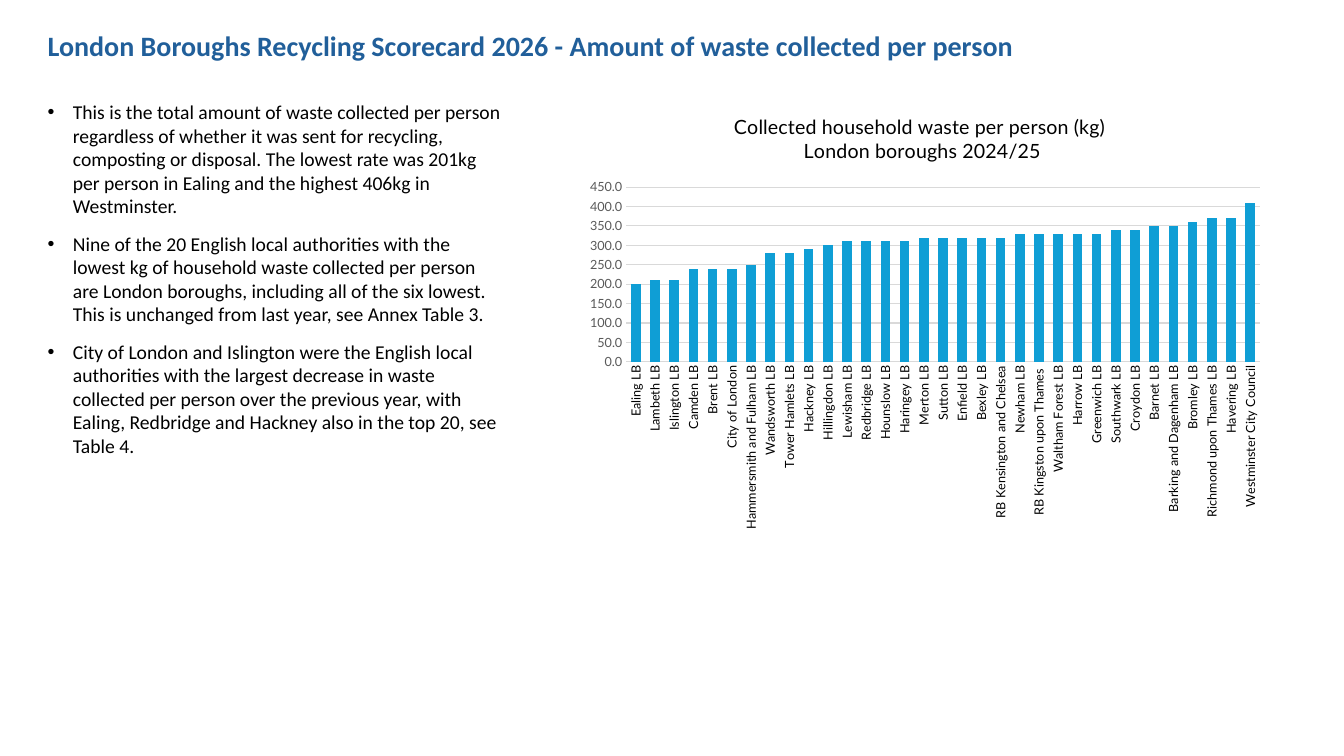
from dataclasses import dataclass
from typing import Any

from lxml import etree
from pptx import Presentation
from pptx.chart.data import CategoryChartData
from pptx.dml.color import RGBColor
from pptx.enum.chart import XL_CHART_TYPE, XL_TICK_MARK
from pptx.enum.text import MSO_ANCHOR
from pptx.oxml import parse_xml
from pptx.oxml.ns import nsdecls, qn
from pptx.util import Inches, Pt

COLUMN = XL_CHART_TYPE.COLUMN_CLUSTERED
NO_TICK = XL_TICK_MARK.NONE
TOP, MIDDLE = MSO_ANCHOR.TOP, MSO_ANCHOR.MIDDLE

NAVY = RGBColor(0x21, 0x5F, 0x9A)
BLUE = RGBColor(0x0F, 0x9E, 0xD5)
BLACK = RGBColor(0, 0, 0)
GREY = RGBColor(0x59, 0x59, 0x59)
PALE = RGBColor(0xD9, 0xD9, 0xD9)

# Grid of 100 columns by 100 rows
WIDTH, HEIGHT = Inches(13.33), Inches(7.5)
COL, ROW = WIDTH / 100, HEIGHT / 100
LEFT, UPPER = 2.81, 12.56

HEAD_FONT = {"name": "Calibri", "size": Pt(20), "bold": True}
BODY_FONT = {"name": "Calibri", "size": Pt(14)}
CHART_FONT = {"name": "Lato", "size": Pt(10)}
TITLE_FONT = {"name": "Lato", "size": Pt(14), "bold": False}
AXIS_FONT = {"name": "Lato", "size": Pt(9)}


@dataclass
class Area:
    col: float
    row: float
    cols: float
    rows: float

    def box(self) -> tuple[int, ...]:
        return (round(self.col * COL), round(self.row * ROW),
                round(self.cols * COL), round(self.rows * ROW))


@dataclass
class Block:
    area: Area
    lines: list[str]
    font: dict[str, Any]
    color: RGBColor
    anchor: Any
    pitch: float
    dots: bool = False


BLOCKS = [
    Block(Area(LEFT, 0.13, 74.7, 12.27),
          ["London Boroughs Recycling Scorecard 2026 - Amount of waste collected per person"],
          HEAD_FONT, NAVY, MIDDLE, 0.9),
    Block(Area(LEFT, UPPER, 35.48, 76.4), [
        "This is the total amount of waste collected per person regardless of whether it was "
        "sent for recycling, composting or disposal. The lowest rate was 201kg per person in "
        "Ealing and the highest 406kg in Westminster.",
        "Nine of the 20 English local authorities with the lowest kg of household waste "
        "collected per person are London boroughs, including all of the six lowest. This is "
        "unchanged from last year, see Annex Table 3.",
        "City of London and Islington were the English local authorities with the largest "
        "decrease in waste collected per person over the previous year, with Ealing, "
        "Redbridge and Hackney also in the top 20, see Table 4.",
    ], BODY_FONT, BLACK, TOP, 1.0, True),
]

CHART_AREA = Area(42.08, UPPER, 53.1, 62.27)
CHART_TITLE = ["Collected household waste per person (kg) ", "London boroughs 2024/25"]
# Plot place in percent of the chart
PLOT_AREA = {"x": 8.5, "y": 19.6, "w": 88.8, "h": 37.1}
WASTE = {
    "Ealing LB": 200, "Lambeth LB": 210, "Islington LB": 210, "Camden LB": 240,
    "Brent LB": 240, "City of London": 240, "Hammersmith and Fulham LB": 250,
    "Wandsworth LB": 280, "Tower Hamlets LB": 280, "Hackney LB": 290,
    "Hillingdon LB": 300, "Lewisham LB": 310, "Redbridge LB": 310, "Hounslow LB": 310,
    "Haringey LB": 310, "Merton LB": 320, "Sutton LB": 320, "Enfield LB": 320,
    "Bexley LB": 320, "RB Kensington and Chelsea": 320, "Newham LB": 330,
    "RB Kingston upon Thames ": 330, "Waltham Forest LB": 330, "Harrow LB": 330,
    "Greenwich LB": 330, "Southwark LB": 340, "Croydon LB": 340, "Barnet LB": 350,
    "Barking and Dagenham LB": 350, "Bromley LB": 360, "Richmond upon Thames LB": 370,
    "Havering LB": 370, "Westminster City Council": 410,
}


def assign(item: Any, values: dict[str, Any]) -> None:
    for name, value in values.items():
        setattr(item, name, value)


def style(font: Any, values: dict[str, Any], color: RGBColor) -> None:
    assign(font, values)
    font.color.rgb = color


def rule(line: Any) -> None:
    line.color.rgb = PALE
    line.width = Pt(0.75)


def add_dot(para: Any) -> None:
    props = para._p.get_or_add_pPr()
    props.set("marL", str(Inches(0.25)))
    props.set("indent", str(-Inches(0.25)))
    etree.SubElement(props, qn("a:buFont")).set("typeface", "Arial")
    etree.SubElement(props, qn("a:buChar")).set("char", "•")


def fill_text(frame: Any, lines: list[str], font: dict[str, Any], color: RGBColor,
              dots: bool = False, pitch: float = 1.0) -> None:
    for i, line in enumerate(lines):
        para = frame.add_paragraph() if i else frame.paragraphs[0]
        if dots:
            add_dot(para)
        para.line_spacing = pitch
        if dots and i:
            para.space_before = Pt(10)
        run = para.add_run()
        run.text = line
        style(run.font, font, color)


def add_block(slide: Any, block: Block) -> None:
    frame = slide.shapes.add_textbox(*block.area.box()).text_frame
    assign(frame, {"word_wrap": True, "vertical_anchor": block.anchor})
    fill_text(frame, block.lines, block.font, block.color, block.dots, block.pitch)


def place_plot(chart: Any) -> None:
    plot = chart.element.find(".//" + qn("c:plotArea"))
    for old in plot.findall(qn("c:layout")):
        plot.remove(old)
    modes = "".join(f'<c:{k}Mode val="edge"/>' for k in "xy")
    sizes = "".join(f'<c:{k} val="{v / 100:.3f}"/>' for k, v in PLOT_AREA.items())
    plot.insert(0, parse_xml(
        f'<c:layout {nsdecls("c")}><c:manualLayout><c:layoutTarget val="inner"/>'
        f'{modes}{sizes}</c:manualLayout></c:layout>'))


def add_bars(slide: Any) -> None:
    data = CategoryChartData(number_format="0.0")
    data.categories = list(WASTE)
    data.add_series("Series 1", list(WASTE.values()))
    chart = slide.shapes.add_chart(COLUMN, *CHART_AREA.box(), data).chart
    chart.has_legend = False
    style(chart.font, CHART_FONT, BLACK)
    fill_text(chart.chart_title.text_frame, CHART_TITLE, TITLE_FONT, BLACK)
    place_plot(chart)

    # Bars
    plot = chart.plots[0]
    assign(plot, {"gap_width": 100, "overlap": -27, "vary_by_categories": False})
    fill = plot.series[0].format.fill
    fill.solid()
    fill.fore_color.rgb = BLUE

    # Axes
    names, scale = chart.category_axis, chart.value_axis
    for axis, color in ((names, BLACK), (scale, GREY)):
        assign(axis, {"major_tick_mark": NO_TICK, "minor_tick_mark": NO_TICK})
        style(axis.tick_labels.font, AXIS_FONT, color)
    rule(names.format.line)
    turn = names._element.find(qn("c:txPr")).find(qn("a:bodyPr"))
    turn.set("rot", "-5400000")
    turn.set("vert", "horz")
    assign(scale, {"minimum_scale": 0, "maximum_scale": 450, "major_unit": 50,
                   "has_major_gridlines": True})
    scale.format.line.fill.background()
    rule(scale.major_gridlines.format.line)
    assign(scale.tick_labels, {"number_format": "0.0", "number_format_is_linked": False})


def main() -> None:
    deck = Presentation()
    assign(deck, {"slide_width": WIDTH, "slide_height": HEIGHT})
    slide = deck.slides.add_slide(deck.slide_layouts[6])
    for block in BLOCKS:
        add_block(slide, block)
    add_bars(slide)
    deck.save("out.pptx")


if __name__ == "__main__":
    main()
